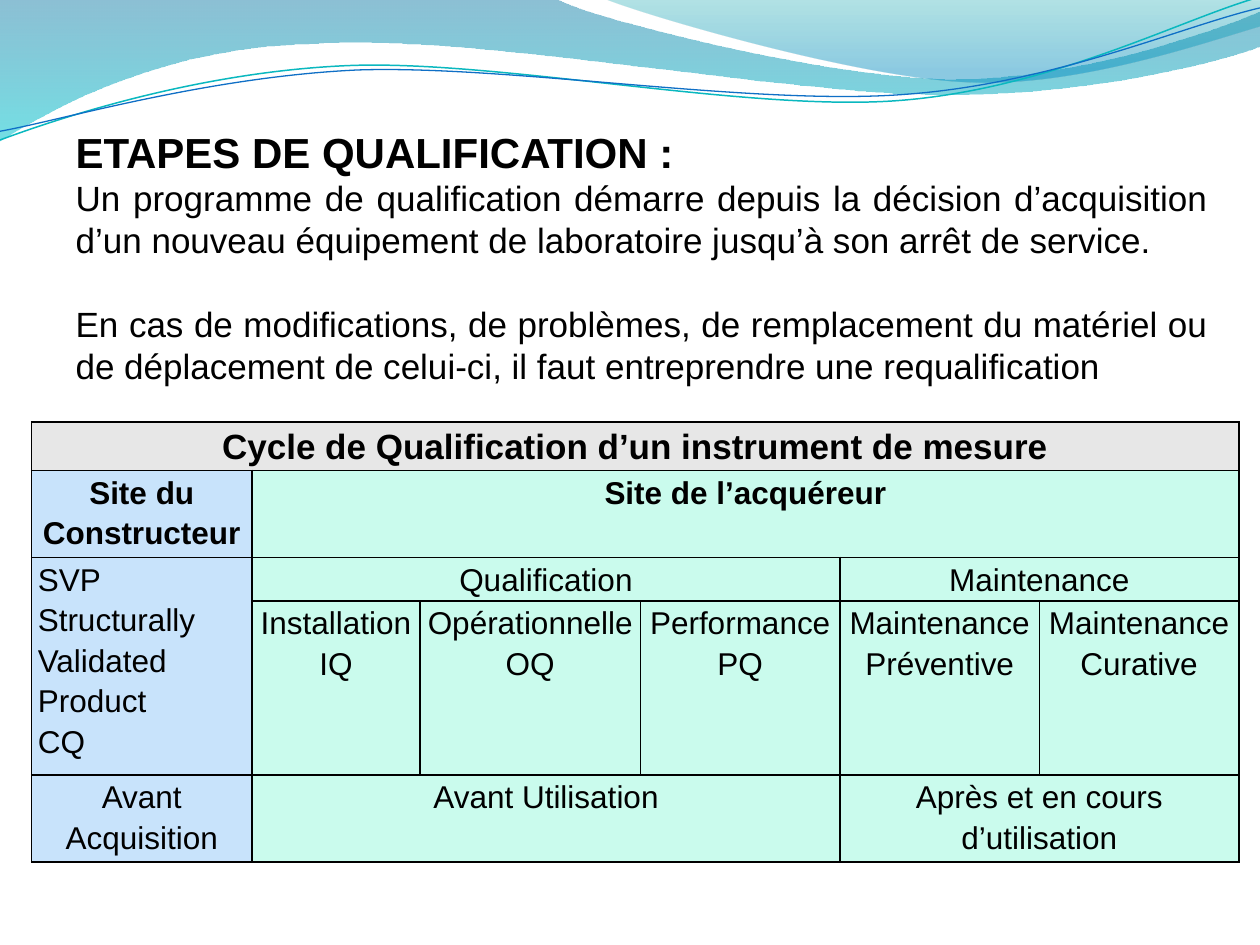
from pptx import Presentation
from pptx.dml.color import RGBColor
from pptx.enum.text import MSO_ANCHOR, MSO_AUTO_SIZE, PP_ALIGN
from pptx.oxml import parse_xml
from pptx.oxml.ns import nsdecls, qn
from pptx.util import Pt
from lxml.etree import SubElement

BLACK = RGBColor(0x00, 0x00, 0x00)
GREY = RGBColor(0xE7, 0xE7, 0xE7)
BLUE = RGBColor(0xC8, 0xE3, 0xFB)
MINT = RGBColor(0xCA, 0xFB, 0xED)
DEEP_BLUE = RGBColor(0x00, 0x74, 0xA1)
CYAN = RGBColor(0x00, 0xC6, 0xCF)
TEAL = RGBColor(0x00, 0xA1, 0xA9)
SKY = RGBColor(0x00, 0x8B, 0xBF)
TURQUOISE = RGBColor(0x0A, 0xB8, 0xBF)
ROYAL = RGBColor(0x0F, 0x6F, 0xC6)

BAND = [(0, 0), (317, -1), (343, 12, 478, 45, 546, 45), (614, 45, 690, 19, 720, 6.5),
        (721, 26), (708, 32, 626, 55, 537, 54), (448, 54, 275, 20, 185, 24.5),
        (93, 26, 33, 60, -1, 81)]
CREST = [(345, -1), (366, 8, 491, 45, 554, 47), (616, 50, 692, 23, 720, 15), (720, 0)]
UPPER_LINE = [(0, 80), (35, 67, 114, 41, 199, 37.5), (284, 34, 427, 64, 513, 57.5),
              (600, 51, 675, 11, 719, -1.5)]
LOWER_LINE = [(0, 75), (34, 69, 118, 44, 204, 40), (290, 37, 430, 60.5, 516, 54),
              (602, 48, 675, 15, 720, 4.5)]

COLUMNS = [126, 96, 126, 114, 114, 114]
ROWS = [27.4, 49.7, 24.8, 99.4, 49.7]
CELLS = [
    (0, 0, 1, 6, GREY, ["Cycle de Qualification d’un instrument de mesure"], {"size": 20, "bold": True}),
    (1, 0, 1, 1, BLUE, ["Site du Constructeur"], {"bold": True}),
    (1, 1, 1, 5, MINT, ["Site de l’acquéreur"], {"bold": True}),
    (2, 0, 2, 1, BLUE, ["SVP", "Structurally Validated Product", "CQ"], {"align": PP_ALIGN.LEFT}),
    (2, 1, 1, 3, MINT, ["Qualification"], {}),
    (2, 4, 1, 2, MINT, ["Maintenance"], {}),
    (3, 1, 1, 1, MINT, ["Installation", "IQ"], {}),
    (3, 2, 1, 1, MINT, ["Opérationnelle", "OQ"], {}),
    (3, 3, 1, 1, MINT, ["Performance", "PQ"], {}),
    (3, 4, 1, 1, MINT, ["Maintenance", "Préventive"], {}),
    (3, 5, 1, 1, MINT, ["Maintenance", "Curative"], {}),
    (4, 0, 1, 1, BLUE, ["Avant Acquisition"], {}),
    (4, 1, 1, 3, MINT, ["Avant Utilisation"], {}),
    (4, 4, 1, 2, MINT, ["Après et en cours d’utilisation"], {}),
]


def write(tf, text, size=18, bold=False, align=PP_ALIGN.CENTER, spacing=1.15,
          before=0, color=BLACK, font="Arial"):
    p = tf.paragraphs[0] if not tf.text else tf.add_paragraph()
    p.alignment = align
    p.line_spacing = spacing
    p.space_before = Pt(before)
    r = p.add_run()
    r.text = text
    r.font.name = font
    r.font.size = Pt(size)
    r.font.bold = bold
    r.font.color.rgb = color


class Deck:
    def __init__(self, width, height):
        self.prs = Presentation()
        self.prs.slide_width = Pt(width)
        self.prs.slide_height = Pt(height)
        self.border = BLACK
        self.s = None

    def slide(self):
        self.s = self.prs.slides.add_slide(self.prs.slide_layouts[5])

    def outline(self, segments, closed):
        points = [(Pt(x), Pt(y)) for seg in segments for x, y in zip(seg[::2], seg[1::2])]
        builder = self.s.shapes.build_freeform(*points[0], scale=1.0)
        builder.add_line_segments(points[1:], close=closed)
        sp = builder.convert_to_shape()
        sp.shadow.inherit = False
        lines = iter(list(sp._element.spPr.iter(qn("a:lnTo"))))
        for seg in segments[1:]:
            group = [next(lines) for _ in range(len(seg) // 2)]
            if len(group) == 3:
                bezier = parse_xml(f'<a:cubicBezTo {nsdecls("a")}/>')
                group[0].addprevious(bezier)
                for line in group:
                    bezier.append(line[0])
                    line.getparent().remove(line)
        return sp

    def wave(self, segments, stops):
        sp = self.outline(segments, True)
        sp.line.fill.background()
        sp.fill.gradient()
        sp.fill.gradient_angle = 270
        for stop, (position, color, _) in zip(sp.fill.gradient_stops, stops):
            stop.position = position
            stop.color.rgb = color
        for clr, (_, _, opacity) in zip(sp._element.spPr.iter(qn("a:srgbClr")), stops):
            SubElement(clr, qn("a:alpha")).set("val", str(opacity * 1000))

    def curve(self, segments, color, width):
        sp = self.outline(segments, False)
        sp.fill.background()
        sp.line.color.rgb = color
        sp.line.width = Pt(width)

    def title(self, left, top, width, height):
        sp = self.s.shapes.title
        self.s.shapes._spTree.append(sp._element)
        sp.left, sp.top, sp.width, sp.height = Pt(left), Pt(top), Pt(width), Pt(height)
        tf = sp.text_frame
        tf.word_wrap = True
        tf.auto_size = MSO_AUTO_SIZE.SHAPE_TO_FIT_TEXT
        tf.vertical_anchor = MSO_ANCHOR.MIDDLE
        return tf

    def table(self, left, top, columns, rows, cells):
        table = self.s.shapes.add_table(len(rows), len(columns), Pt(left), Pt(top),
                                        Pt(sum(columns)), Pt(sum(rows))).table
        table.first_row = table.horz_banding = False
        for column, width in zip(table.columns, columns):
            column.width = Pt(width)
        for row, height in zip(table.rows, rows):
            row.height = Pt(height)
        for cell in table.iter_cells():
            self.borders(cell)
        for row, col, row_span, col_span, fill, lines, style in cells:
            cell = table.cell(row, col)
            if row_span * col_span > 1:
                cell.merge(table.cell(row + row_span - 1, col + col_span - 1))
            cell.fill.solid()
            cell.fill.fore_color.rgb = fill
            cell.margin_left = cell.margin_right = Pt(3.6)
            cell.margin_top = cell.margin_bottom = Pt(0)
            for line in lines:
                write(cell.text_frame, line, **style)

    def borders(self, cell):
        tc_pr = cell._tc.get_or_add_tcPr()
        for side in ("lnL", "lnR", "lnT", "lnB"):
            tc_pr.append(parse_xml(
                f'<a:{side} {nsdecls("a")} w="{Pt(1)}"><a:solidFill>'
                f'<a:srgbClr val="{self.border}"/></a:solidFill></a:{side}>'))


def main():
    deck = Deck(720, 540)
    deck.slide()
    deck.wave(BAND, [(0, DEEP_BLUE, 45), (1, CYAN, 55)])
    deck.wave(CREST, [(0, TEAL, 30), (0.8, SKY, 45)])
    deck.curve(UPPER_LINE, TURQUOISE, 0.85)
    deck.curve(LOWER_LINE, ROYAL, 0.75)
    tf = deck.title(36, 53.3, 661.7, 172)
    write(tf, "ETAPES DE QUALIFICATION :", size=24, bold=True, align=PP_ALIGN.LEFT, spacing=1.5)
    body = {"size": 20, "align": PP_ALIGN.JUSTIFY, "spacing": 1.0}
    write(tf, "Un programme de qualification démarre depuis la décision d’acquisition "
              "d’un nouveau équipement de laboratoire jusqu’à son arrêt de service.", **body)
    write(tf, "En cas de modifications, de problèmes, de remplacement du matériel ou "
              "de déplacement de celui-ci, il faut entreprendre une requalification",
          before=24, **body)
    deck.table(18, 241.2, COLUMNS, ROWS, CELLS)
    deck.prs.save("out.pptx")


if __name__ == "__main__":
    main()
